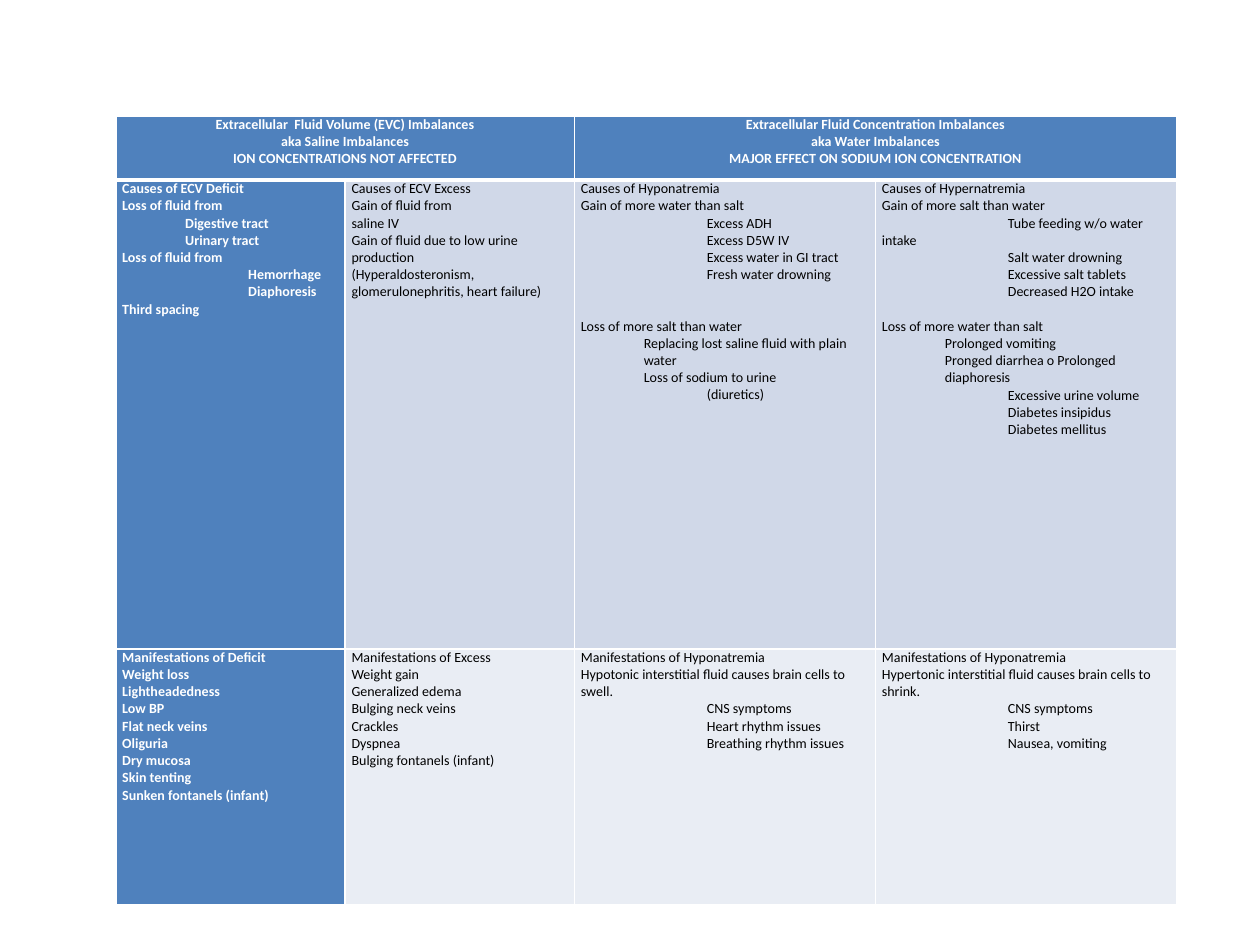
from dataclasses import dataclass

from lxml.etree import SubElement
from pptx import Presentation
from pptx.dml.color import RGBColor
from pptx.enum.text import MSO_ANCHOR, PP_ALIGN
from pptx.oxml.ns import qn
from pptx.util import Inches, Pt


@dataclass(frozen=True)
class Theme:
    """Colours and type sizes of the slide."""
    font: str = "Calibri"
    size: float = 8
    line: float = 9.77
    accent: str = "4F81BD"
    bands: tuple = ("D0D8E8", "E9EDF4")
    light: str = "FFFFFF"
    dark: str = "000000"


THEME = Theme()
COLUMNS = (1.82, 1.82, 2.39, 2.39)
ROWS = (0.51, 3.72, 2.03)
FIRST_HALF = {"first": 0.5}
FIRST_INCH = {"first": 1}
HANG = {"left": 0.5}

HEADERS = (
    ("Extracellular  Fluid Volume (EVC) Imbalances", "aka Saline Imbalances",
     "ION CONCENTRATIONS NOT AFFECTED"),
    ("Extracellular Fluid Concentration Imbalances", "aka Water Imbalances",
     "MAJOR EFFECT ON SODIUM ION CONCENTRATION"),
)


def group(style, *texts):
    """Give several lines the same paragraph format."""
    return [(text, style) for text in texts]


CAUSES = (
    ["Causes of ECV Deficit", "Loss of fluid from",
     *group(FIRST_HALF, "Digestive tract", "Urinary tract"),
     "Loss of fluid from",
     *group(FIRST_INCH, "Hemorrhage", "Diaphoresis"),
     "Third spacing"],
    ["Causes of ECV Excess", "Gain of fluid from", "saline IV",
     "Gain of fluid due to low urine production",
     "(Hyperaldosteronism, glomerulonephritis, heart failure)"],
    ["Causes of Hyponatremia", "Gain of more water than salt",
     *group(FIRST_INCH, "Excess ADH", "Excess D5W IV",
            "Excess water in GI tract", "Fresh water drowning"),
     ("Loss of more salt than water", {"before": 2 * THEME.line}),
     *group(HANG, "Replacing lost saline fluid with plain water",
            "Loss of sodium to urine"),
     ("(diuretics)", {"left": 0.5, "first": 0.5})],
    ["Causes of Hypernatremia", "Gain of more salt than water",
     *group(FIRST_INCH, "Tube feeding w/o water intake", "Salt water drowning",
            "Excessive salt tablets", "Decreased H2O intake"),
     ("Loss of more water than salt", {"before": THEME.line}),
     *group(HANG, "Prolonged vomiting",
            "Pronged diarrhea o Prolonged diaphoresis"),
     *group(FIRST_INCH, "Excessive urine volume", "Diabetes insipidus",
            "Diabetes mellitus")],
)

MANIFESTATIONS = (
    ["Manifestations of Deficit", "Weight loss", "Lightheadedness", "Low BP",
     "Flat neck veins", "Oliguria", "Dry mucosa", "Skin tenting",
     "Sunken fontanels (infant)"],
    ["Manifestations of Excess", "Weight gain", "Generalized edema",
     "Bulging neck veins", "Crackles", "Dyspnea", "Bulging fontanels (infant)"],
    ["Manifestations of Hyponatremia",
     "Hypotonic interstitial fluid causes brain cells to swell.",
     *group(FIRST_INCH, "CNS symptoms", "Heart rhythm issues",
            "Breathing rhythm issues")],
    ["Manifestations of Hyponatremia",
     "Hypertonic interstitial fluid causes brain cells to shrink.",
     *group(FIRST_INCH, "CNS symptoms", "Thirst", "Nausea, vomiting")],
)


def write_text(para, text, color=THEME.dark, bold=False, align=PP_ALIGN.LEFT,
               left=0, first=0, before=0):
    """Write one formatted paragraph."""
    para.alignment = align
    para.space_before = Pt(before)
    properties = para._p.get_or_add_pPr()
    properties.set("marL", str(Inches(left)))
    properties.set("indent", str(Inches(first)))
    span = para.add_run()
    span.text = text
    span.font.name = THEME.font
    span.font.size = Pt(THEME.size)
    span.font.bold = bold
    span.font.color.rgb = RGBColor.from_string(color)


def style_cell(cell, fill, top=1, bottom=1):
    """Set the margins, borders and fill of a cell."""
    cell.margin_left = cell.margin_right = Inches(0.05)
    cell.margin_top = cell.margin_bottom = 0
    cell.vertical_anchor = MSO_ANCHOR.TOP
    properties = cell._tc.get_or_add_tcPr()
    for side, width in (("L", 1), ("R", 1), ("T", top), ("B", bottom)):
        border = SubElement(properties, qn(f"a:ln{side}"), w=str(Pt(width)))
        solid = SubElement(border, qn("a:solidFill"))
        SubElement(solid, qn("a:srgbClr"), val=THEME.light)
    cell.fill.solid()
    cell.fill.fore_color.rgb = RGBColor.from_string(fill)


def fill_cell(cell, lines, **base):
    """Write lines, plain or with their own format, into a cell."""
    frame = cell.text_frame
    frame.word_wrap = True
    for index, line in enumerate(lines):
        text, own = (line, {}) if isinstance(line, str) else line
        para = frame.add_paragraph() if index else frame.paragraphs[0]
        write_text(para, text, **base, **own)


def add_grid(page):
    """Add the empty table with its column widths and row heights."""
    table = page.shapes.add_table(
        len(ROWS), len(COLUMNS), Inches(0.92), Inches(0.92),
        Inches(sum(COLUMNS)), Inches(sum(ROWS))).table
    for column, width in zip(table.columns, COLUMNS):
        column.width = Inches(width)
    for row, height in zip(table.rows, ROWS):
        row.height = Inches(height)
    return table


def add_headers(table):
    """Fill the top row with two headings, each over two columns."""
    for column in range(len(COLUMNS)):
        style_cell(table.cell(0, column), THEME.accent, bottom=3)
    for index, lines in enumerate(HEADERS):
        cell = table.cell(0, 2 * index)
        cell.merge(table.cell(0, 2 * index + 1))
        fill_cell(cell, lines, color=THEME.light, bold=True,
                  align=PP_ALIGN.CENTER)


def add_body(table):
    """Fill the banded rows, with an accented first column."""
    for row, contents in enumerate((CAUSES, MANIFESTATIONS), 1):
        for column, lines in enumerate(contents):
            lead = column == 0
            cell = table.cell(row, column)
            style_cell(cell, THEME.accent if lead else THEME.bands[row - 1],
                       top=3 if row == 1 else 1)
            fill_cell(cell, lines, bold=lead,
                      color=THEME.light if lead else THEME.dark)


def main():
    """Build the slide and save it."""
    deck = Presentation()
    deck.slide_width, deck.slide_height = Inches(10), Inches(7.5)
    page = deck.slides.add_slide(deck.slide_layouts[6])
    table = add_grid(page)
    add_headers(table)
    add_body(table)
    deck.save("out.pptx")


if __name__ == "__main__":
    main()
